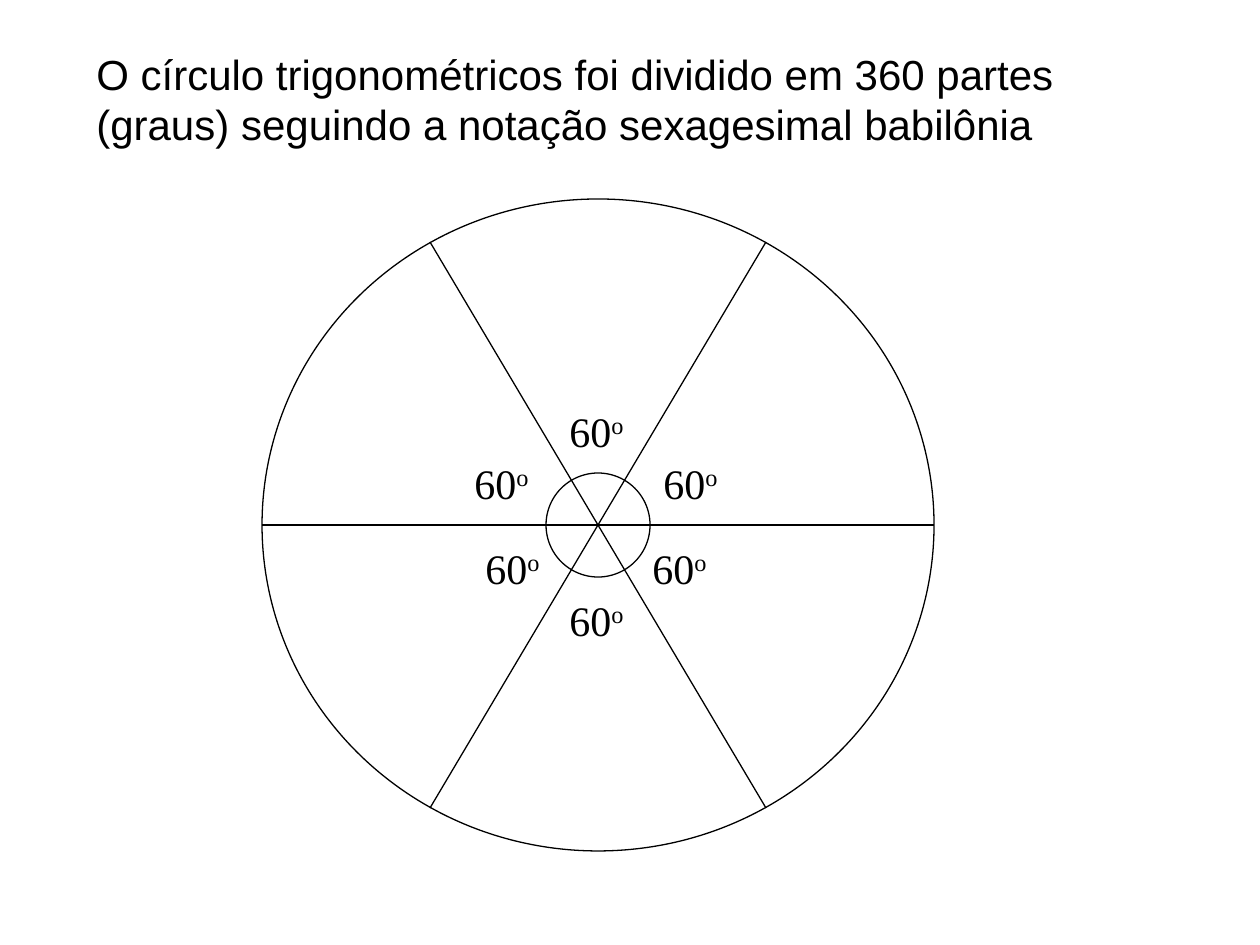
from lxml import etree
from pptx import Presentation
from pptx.dml.color import RGBColor
from pptx.enum.shapes import MSO_CONNECTOR, MSO_SHAPE
from pptx.enum.text import MSO_AUTO_SIZE
from pptx.oxml.ns import qn
from pptx.util import Emu, Pt

ELLIPSE = MSO_SHAPE.OVAL
STRAIGHT = MSO_CONNECTOR.STRAIGHT
GROW = MSO_AUTO_SIZE.SHAPE_TO_FIT_TEXT
BLACK = RGBColor(0, 0, 0)
EMU_PER_PX = 914400 / 126
WIDTH, HEIGHT = 1260, 945

CENTER_X, CENTER_Y = 598, 525
OUTER_RADII = (336, 326)
INNER_RADII = (52, 52)
RAYS = [(336, 0), (168, 283), (168, -283)]
LABEL_SIZE = (82, 63)
LABEL_POSITIONS = [(557, 399), (651, 451), (462, 451),
                   (473, 536), (640, 536), (557, 588)]
TITLE = ("O círculo trigonométricos foi dividido em 360 partes (graus) "
         "seguindo a notação sexagesimal babilônia")


def px(*lengths):
    return [Emu(round(length * EMU_PER_PX)) for length in lengths]


def apply_format(target, values):
    for name, value in values.items():
        setattr(target, name, value)


class SlideBuilder:
    text_size = Pt(24)
    line_width = Pt(0.75)

    def __init__(self, slide):
        self.slide = slide

    def style_line(self, line):
        line.color.rgb = BLACK
        line.width = self.line_width

    def ellipse(self, center_x, center_y, radius_x, radius_y):
        shape = self.slide.shapes.add_shape(
            ELLIPSE, *px(center_x - radius_x, center_y - radius_y,
                         2 * radius_x, 2 * radius_y))
        shape.shadow.inherit = False
        shape.fill.background()
        self.style_line(shape.line)

    def line(self, start_x, start_y, end_x, end_y):
        connector = self.slide.shapes.add_connector(
            STRAIGHT, *px(start_x, start_y, end_x, end_y))
        self.style_line(connector.line)
        etree.SubElement(connector._element.spPr, qn("a:effectLst"))

    def text(self, left, top, width, height, content, font_name,
             superscript="", wrap=True):
        shape = self.slide.shapes.add_textbox(*px(left, top, width, height))
        frame = shape.text_frame
        apply_format(frame, {"word_wrap": wrap, "auto_size": GROW})
        paragraph = frame.paragraphs[0]
        self.run(paragraph, content, font_name)
        if superscript:
            raised = self.run(paragraph, superscript, font_name)
            raised.font._element.set("baseline", "30000")

    def run(self, paragraph, content, font_name):
        run = paragraph.add_run()
        run.text = content
        apply_format(run.font, {"name": font_name, "size": self.text_size})
        run.font.color.rgb = BLACK
        return run


def main():
    presentation = Presentation()
    slide_width, slide_height = px(WIDTH, HEIGHT)
    apply_format(presentation, {"slide_width": slide_width,
                                "slide_height": slide_height})
    builder = SlideBuilder(
        presentation.slides.add_slide(presentation.slide_layouts[6]))

    builder.ellipse(CENTER_X, CENTER_Y, *OUTER_RADII)
    for offset_x, offset_y in RAYS:
        builder.line(CENTER_X - offset_x, CENTER_Y - offset_y,
                     CENTER_X + offset_x, CENTER_Y + offset_y)
    for left, top in LABEL_POSITIONS:
        builder.text(left, top, *LABEL_SIZE, "60", "Times New Roman",
                     superscript="o", wrap=False)
    builder.ellipse(CENTER_X, CENTER_Y, *INNER_RADII)
    builder.text(84, 42, 1031, 113, TITLE, "Arial")

    presentation.save("out.pptx")


if __name__ == "__main__":
    main()
